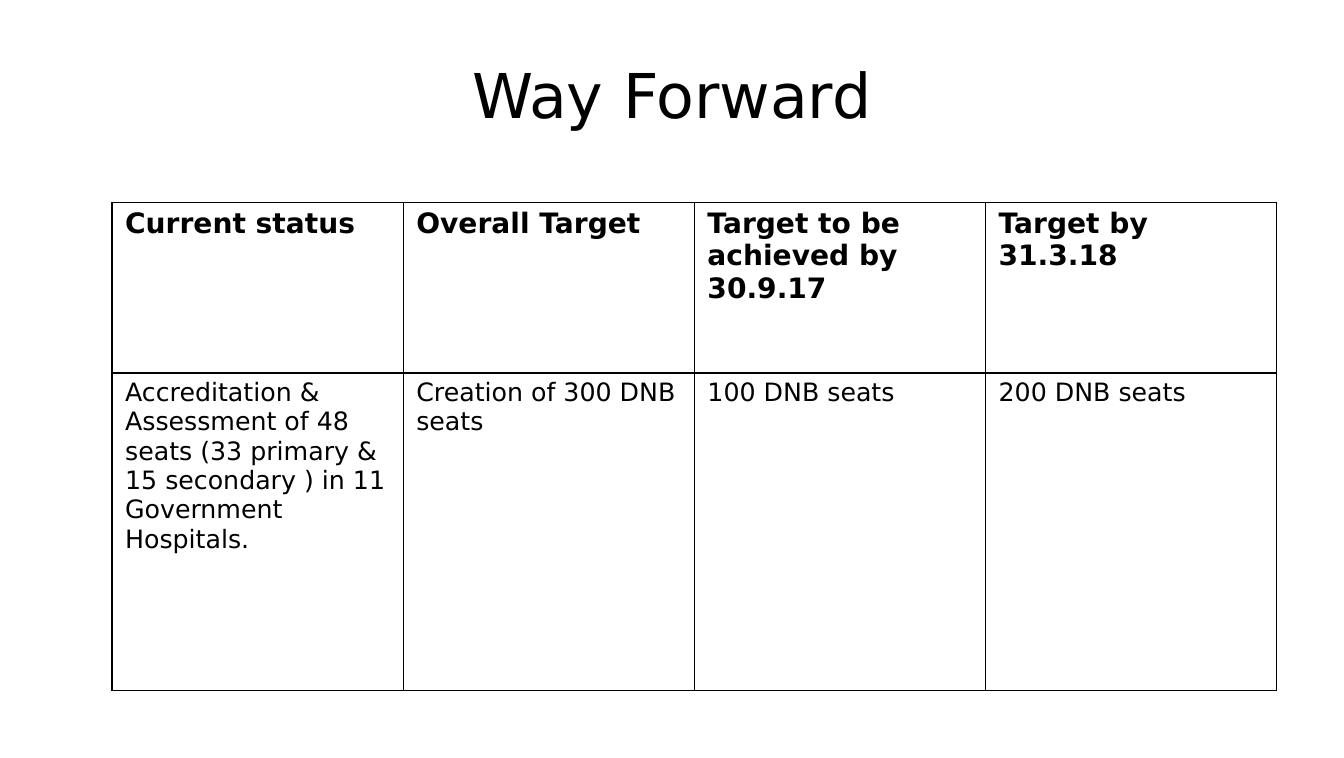
from dataclasses import dataclass

import lxml.etree
import pptx
import pptx.dml.color
import pptx.enum.text
import pptx.oxml.ns
import pptx.util

Inches = pptx.util.Inches
SLIDE_WIDTH, SLIDE_HEIGHT = 13.3, 7.5


@dataclass(frozen=True)
class Theme:
    font: str = "DejaVu Sans"
    ink: str = "000000"
    title_size: int = 44
    header_size: int = 20
    body_size: int = 18
    border_width: int = 1
    cell_margin_x: float = 0.13
    cell_margin_y: float = 0.05


@dataclass(frozen=True)
class Area:
    """Left, top, width and height in inches."""
    left: float
    top: float
    width: float
    height: float

    def lengths(self) -> list[int]:
        return [Inches(value) for value in (self.left, self.top, self.width, self.height)]


@dataclass(frozen=True)
class TableRow:
    share: float
    size: int
    bold: bool
    texts: tuple[str, ...]


THEME = Theme()
TITLE_AREA = Area(0.05 * SLIDE_WIDTH, 0.04 * SLIDE_HEIGHT, 0.9 * SLIDE_WIDTH, SLIDE_HEIGHT / 6)
TABLE_AREA = Area(SLIDE_WIDTH / 12, 2, SLIDE_WIDTH * 13 / 15, 4.83)
TARGET_ROWS = (
    TableRow(0.35, THEME.header_size, True, (
        "Current status",
        "Overall Target",
        "Target to be achieved by 30.9.17",
        "Target by 31.3.18",
    )),
    TableRow(0.65, THEME.body_size, False, (
        "Accreditation & Assessment of 48 seats (33 primary & 15 secondary ) "
        "in 11 Government Hospitals.",
        "Creation of 300 DNB seats",
        "100 DNB seats",
        "200 DNB seats",
    )),
)


def add_span(para, text: str, size: int, bold: bool = False) -> None:
    span = para.add_run()
    span.text = text
    span.font.name = THEME.font
    span.font.size = pptx.util.Pt(size)
    span.font.bold = bold
    span.font.color.rgb = pptx.dml.color.RGBColor.from_string(THEME.ink)


def add_title(page, text: str) -> None:
    box = page.shapes.add_textbox(*TITLE_AREA.lengths())
    frame = box.text_frame
    frame.word_wrap = True
    frame.vertical_anchor = pptx.enum.text.MSO_ANCHOR.MIDDLE
    para = frame.paragraphs[0]
    para.alignment = pptx.enum.text.PP_ALIGN.CENTER
    add_span(para, text, THEME.title_size)


def add_borders(cell) -> None:
    qualified = pptx.oxml.ns.qn
    properties = cell._tc.get_or_add_tcPr()
    for side in ("a:lnL", "a:lnR", "a:lnT", "a:lnB"):
        line = lxml.etree.SubElement(properties, qualified(side))
        line.set("w", str(pptx.util.Pt(THEME.border_width)))
        fill = lxml.etree.SubElement(line, qualified("a:solidFill"))
        lxml.etree.SubElement(fill, qualified("a:srgbClr")).set("val", THEME.ink)


def fill_cell(cell, text: str, row: TableRow) -> None:
    cell.margin_left = cell.margin_right = Inches(THEME.cell_margin_x)
    cell.margin_top = cell.margin_bottom = Inches(THEME.cell_margin_y)
    add_borders(cell)
    cell.fill.background()
    add_span(cell.text_frame.paragraphs[0], text, row.size, row.bold)


def add_target_table(page, rows: tuple[TableRow, ...]) -> None:
    column_count = len(rows[0].texts)
    table = page.shapes.add_table(len(rows), column_count, *TABLE_AREA.lengths()).table
    for column in table.columns:
        column.width = Inches(TABLE_AREA.width / column_count)
    for row_index, row in enumerate(rows):
        table.rows[row_index].height = Inches(TABLE_AREA.height * row.share)
        for column_index, text in enumerate(row.texts):
            fill_cell(table.cell(row_index, column_index), text, row)


def main() -> None:
    deck = pptx.Presentation()
    deck.slide_width, deck.slide_height = Inches(SLIDE_WIDTH), Inches(SLIDE_HEIGHT)
    page = deck.slides.add_slide(deck.slide_layouts[6])
    add_title(page, "Way Forward")
    add_target_table(page, TARGET_ROWS)
    deck.save("out.pptx")


if __name__ == "__main__":
    main()
